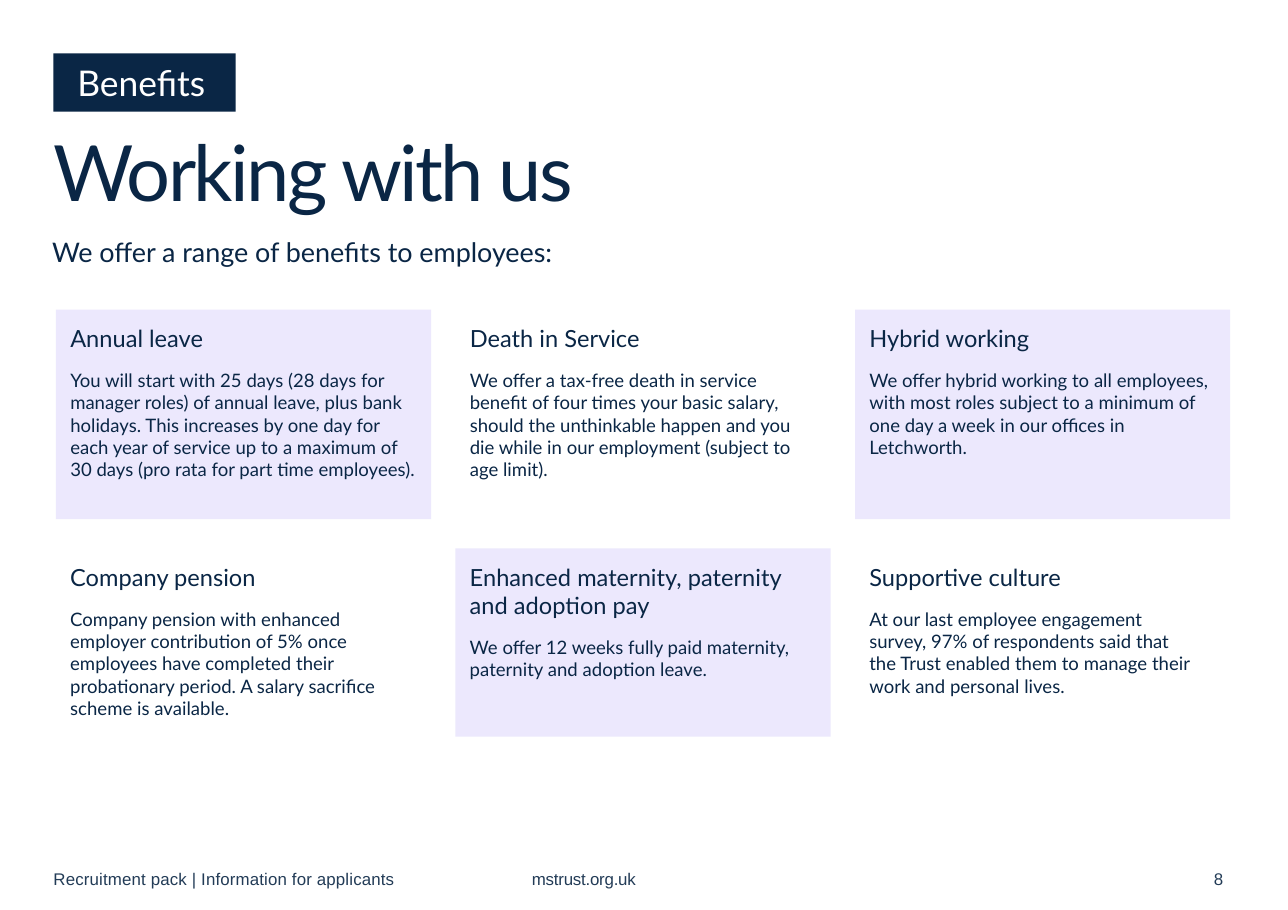
import dataclasses

import pptx
import pptx.dml.color
import pptx.enum.shapes
import pptx.enum.text
import pptx.util
import lxml.etree
import pptx.oxml.ns

Cm = pptx.util.Cm
Pt = pptx.util.Pt
RGB = pptx.dml.color.RGBColor.from_string
ANCHOR = pptx.enum.text.MSO_ANCHOR
RECT = pptx.enum.shapes.MSO_SHAPE.RECTANGLE


@dataclasses.dataclass(frozen=True)
class Theme:
    navy: str = "0A2645"
    lilac: str = "ECE8FD"
    white: str = "FFFFFF"
    slate: str = "233C57"
    font: str = "Lato"
    footer_font: str = "Arial"
    title: int = 46
    tag: int = 21
    lead: int = 16
    heading: int = 14
    body: int = 11
    footer: int = 10


theme = Theme()


def write(p, text, size, color=theme.navy, font=theme.font, level=0, after=0, line=1.0, spacing=0):
    pPr = p._p.get_or_add_pPr()
    pPr.set("marL", "0")
    pPr.set("indent", "0")
    lxml.etree.SubElement(pPr, pptx.oxml.ns.qn("a:buNone"))
    p.level = level
    p.alignment = pptx.enum.text.PP_ALIGN.LEFT
    p.space_before = Pt(0)
    p.space_after = Pt(after)
    p.line_spacing = line
    r = p.add_run()
    r.text = text
    r.font.size = Pt(size)
    r.font.name = font
    r.font.bold = False
    r.font.color.rgb = RGB(color)
    if spacing:
        r._r.get_or_add_rPr().set("spc", str(round(spacing * 100)))


def frame(sp, box, inset=0, fill=None, anchor=ANCHOR.TOP):
    sp.left, sp.top, sp.width, sp.height = (Cm(v) for v in box)
    if fill:
        sp.fill.solid()
        sp.fill.fore_color.rgb = RGB(fill)
        sp.line.fill.background()
    tf = sp.text_frame
    tf.word_wrap = True
    tf.auto_size = pptx.enum.text.MSO_AUTO_SIZE.NONE
    tf.vertical_anchor = anchor
    tf.margin_left = tf.margin_top = tf.margin_right = tf.margin_bottom = Cm(inset)
    return tf


prs = pptx.Presentation()
prs.slide_width = Cm(26.95)
prs.slide_height = Cm(19.05)
s = prs.slides.add_slide(prs.slide_layouts.get_by_name("Comparison"))
lead, *card_bodies = [ph for ph in s.placeholders if ph != s.shapes.title]

tag = s.shapes.add_shape(RECT, 0, 0, 0, 0)
tag.shadow.inherit = False
tf = frame(tag, (1.12, 1.12, 3.81, 1.22), fill=theme.navy, anchor=ANCHOR.MIDDLE)
tf.margin_left = Cm(0.5)
write(tf.paragraphs[0], "Benefits", theme.tag, color=theme.white)

tf = frame(s.shapes.title, (1.12, 2.82, 14.81, 1.8))
write(tf.paragraphs[0], "Working with us", theme.title, line=0.9, spacing=-1.5)

tf = frame(lead, (1.09, 4.93, 17.25, 0.69))
write(tf.paragraphs[0], "We offer a range of benefits to employees:", theme.lead, after=10)

CARD_LEFT, CARD_STEP, CARD_WIDTH = 1.17, 8.36, 7.85
ROWS = [(6.48, 4.39), (11.48, 3.94)]
benefits = [
    ("Annual leave", "You will start with 25 days (28 days for manager roles) of annual leave, plus bank holidays. "
     "This increases by one day for each year of service up to a maximum of 30 days "
     "(pro rata for part time employees).", CARD_WIDTH),
    ("Death in Service", "We offer a tax-free death in service benefit of four times your basic salary, "
     "should the unthinkable happen and you die while in our employment (subject to age limit).", CARD_WIDTH),
    ("Hybrid working", "We offer hybrid working to all employees, with most roles subject to a minimum of "
     "one day a week in our offices in Letchworth.", CARD_WIDTH),
    ("Company pension", "Company pension with enhanced employer contribution of 5% once employees have completed "
     "their probationary period. A salary sacrifice scheme is available.", CARD_WIDTH),
    ("Enhanced maternity, paternity and adoption pay",
     "We offer 12 weeks fully paid maternity, paternity and adoption leave.", CARD_WIDTH),
    ("Supportive culture", "At our last employee engagement survey, 97% of respondents said that the Trust "
     "enabled them to manage their work and personal lives.", 7.52),
]
for i, (heading, text, width) in enumerate(benefits):
    row, col = divmod(i, 3)
    top, height = ROWS[row]
    if row == 0:
        sp = card_bodies[col]
    else:
        sp = s.shapes.add_shape(RECT, 0, 0, 0, 0)
        sp.shadow.inherit = False
    fill = theme.white if i % 2 else theme.lilac
    tf = frame(sp, (CARD_LEFT + col * CARD_STEP, top, width, height), inset=0.3, fill=fill)
    write(tf.paragraphs[0], heading, theme.heading, after=10)
    write(tf.add_paragraph(), text, theme.body, level=1, after=10)

footers = [
    ("Recruitment pack | Information for applicants", 1.12, 7.75, 0.1),
    ("mstrust.org.uk", 11.13, 2.44, -0.1),
    ("8", 25.4, 0.53, -0.2),
]
for text, left, width, spacing in footers:
    tf = frame(s.shapes.add_textbox(0, 0, 0, 0), (left, 18.18, width, 0.53))
    write(tf.paragraphs[0], text, theme.footer, color=theme.slate, font=theme.footer_font, spacing=spacing)

prs.save("out.pptx")
